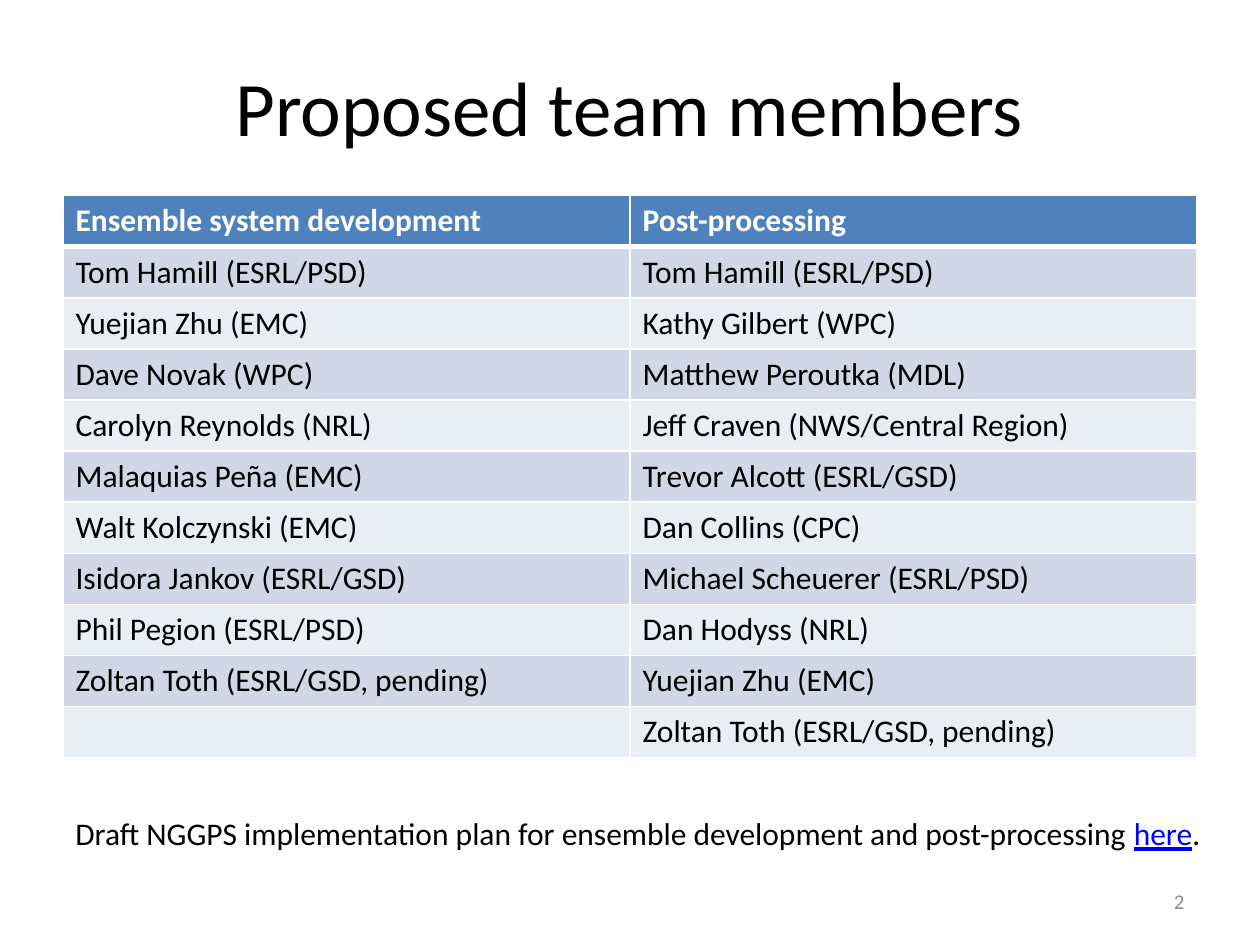
from itertools import zip_longest

from lxml.etree import SubElement
from pptx import Presentation
from pptx.dml.color import RGBColor
from pptx.enum.text import MSO_ANCHOR, PP_ALIGN
from pptx.oxml.ns import qn
from pptx.util import Inches, Pt

ENSEMBLE = [
    "Ensemble system development",
    "Tom Hamill (ESRL/PSD)",
    "Yuejian Zhu (EMC)",
    "Dave Novak (WPC)",
    "Carolyn Reynolds (NRL)",
    "Malaquias Peña (EMC)",
    "Walt Kolczynski (EMC)",
    "Isidora Jankov (ESRL/GSD)",
    "Phil Pegion (ESRL/PSD)",
    "Zoltan Toth (ESRL/GSD, pending)",
]
POST = [
    "Post-processing",
    "Tom Hamill (ESRL/PSD)",
    "Kathy Gilbert (WPC)",
    "Matthew Peroutka (MDL)",
    "Jeff Craven (NWS/Central Region)",
    "Trevor Alcott (ESRL/GSD)",
    "Dan Collins (CPC)",
    "Michael Scheuerer (ESRL/PSD)",
    "Dan Hodyss (NRL)",
    "Yuejian Zhu (EMC)",
    "Zoltan Toth (ESRL/GSD, pending)",
]


def color(code):
    return RGBColor.from_string(code)


def write(para, text, size=18, ink="000000", bold=False, under=False,
          align=PP_ALIGN.LEFT, face="Calibri"):
    para.alignment = align
    run = para.add_run()
    run.text = text
    font = run.font
    font.name, font.size = face, Pt(size)
    font.bold, font.underline = bold, under
    font.color.rgb = color(ink)


def border(cell, **widths):
    props = cell._tc.get_or_add_tcPr()
    for side, width in widths.items():
        line = SubElement(props, qn(f"a:ln{side}"), w=str(Pt(width)))
        fill = SubElement(line, qn("a:solidFill"))
        SubElement(fill, qn("a:srgbClr"), val="FFFFFF")


class Deck:
    head = "4F81BD"
    bands = ("E9EDF4", "D0D8E8")
    link = "0000FF"
    gray = "8C8C8C"

    def __init__(self, wide=10, high=7.5):
        self.show = Presentation()
        self.wide = self.show.slide_width = Inches(wide)
        self.high = self.show.slide_height = Inches(high)
        self.slide = self.show.slides.add_slide(self.show.slide_layouts[5])

    def area(self, left, top, width, height):
        return (int(left * self.wide), int(top * self.high),
                int(width * self.wide), int(height * self.high))

    def title(self, text, *share):
        shape = self.slide.shapes.title
        shape.left, shape.top, shape.width, shape.height = self.area(*share)
        frame = shape.text_frame
        frame.vertical_anchor = MSO_ANCHOR.MIDDLE
        write(frame.paragraphs[0], text, size=44, align=PP_ALIGN.CENTER)

    def text(self, parts, *share, wrap=True, anchor=MSO_ANCHOR.TOP):
        frame = self.slide.shapes.add_textbox(*self.area(*share)).text_frame
        frame.word_wrap = wrap
        frame.vertical_anchor = anchor
        for words, style in parts:
            write(frame.paragraphs[0], words, **style)

    def table(self, columns, *share):
        rows = list(zip_longest(*columns, fillvalue=""))
        area = self.area(*share)
        grid = self.slide.shapes.add_table(len(rows), len(columns), *area).table
        for r, names in enumerate(rows):
            grid.rows[r].height = area[3] // len(rows)
            for c, name in enumerate(names):
                self.cell(grid.cell(r, c), name, r)

    def cell(self, cell, name, row):
        top = row == 0
        border(cell, L=1, R=1, T=3 if row == 1 else 1, B=3 if top else 1)
        cell.fill.solid()
        cell.fill.fore_color.rgb = color(self.head if top else self.bands[row % 2])
        if name:
            write(cell.text_frame.paragraphs[0], name, bold=top,
                  ink="FFFFFF" if top else "000000")


def main():
    deck = Deck()
    deck.title("Proposed team members", 0.05, 0.028, 0.9, 0.167)
    deck.table([ENSEMBLE, POST], 0.05, 0.207, 0.9, 0.595)
    deck.text([("2", dict(size=12, ink=deck.gray, align=PP_ALIGN.RIGHT))],
              0.717, 0.927, 0.233, 0.053, anchor=MSO_ANCHOR.MIDDLE)
    deck.text([
        ("Draft NGGPS implementation plan for ensemble development and post-processing ", {}),
        ("here", dict(ink=deck.link, under=True)),
        (".", {}),
    ], 0.05, 0.855, 0.92, 0.053, wrap=False)
    deck.show.save("out.pptx")


if __name__ == "__main__":
    main()
